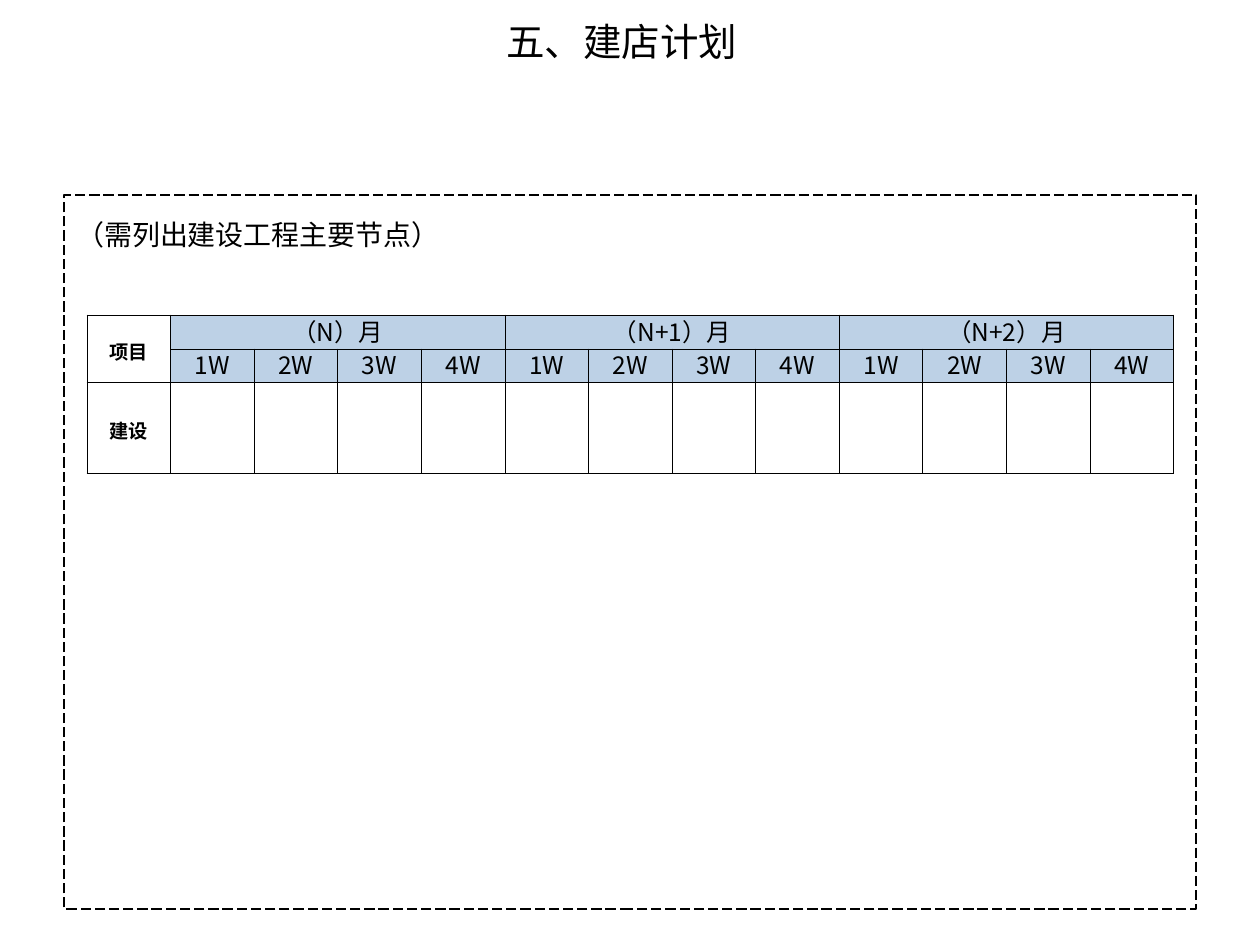
from lxml.etree import SubElement
from pptx import Presentation
from pptx.dml.color import RGBColor
from pptx.enum.dml import MSO_LINE
from pptx.enum.shapes import MSO_SHAPE
from pptx.enum.text import MSO_ANCHOR, MSO_AUTO_SIZE, PP_ALIGN
from pptx.oxml.ns import qn
from pptx.util import Emu, Pt

TITLE = "五、建店计划"
NOTE = "（需列出建设工程主要节点）"
CORNER, TASK = "项目", "建设"
MONTHS = ["（N）月", "（N+1）月", "（N+2）月"]
WEEKS = ["1W", "2W", "3W", "4W"]

FONT = "Noto Sans CJK SC"
COLORS = {"ink": "000000", "header": "BDD1E6"}
SLIDE = (1260, 945)
TITLE_BOX = (494, 4, 384, 64)
FRAME_BOX = (64, 195, 1132, 714)
TABLE_LEFT, TABLE_TOP, TABLE_WIDTH = 87, 315, 1087
ROW_HEIGHTS = [34, 33, 91]


def px(value):
    return Emu(round(value * 914400 / 126))


def color(name):
    return RGBColor.from_string(COLORS[name])


def write(frame, text, size, align, bold=False, spacing=None):
    frame.text = text
    para = frame.paragraphs[0]
    para.alignment = align
    para.line_spacing = spacing
    for span in para.runs:
        font = span.font
        font.size, font.bold, font.name = Pt(size), bold, FONT
        font.color.rgb = color("ink")
        SubElement(font._element, qn("a:ea"), typeface=FONT)


def add_borders(cell):
    properties = cell._tc.get_or_add_tcPr()
    for index, side in enumerate(("lnL", "lnR", "lnT", "lnB")):
        line = properties.makeelement(qn(f"a:{side}"), {"w": str(Pt(0.5))})
        fill = SubElement(line, qn("a:solidFill"))
        SubElement(fill, qn("a:srgbClr"), val=COLORS["ink"])
        properties.insert(index, line)


def fill_cell(cell, text, size=14, bold=False, header=True):
    if header:
        cell.fill.solid()
        cell.fill.fore_color.rgb = color("header")
    write(cell.text_frame, text, size, PP_ALIGN.CENTER, bold, Pt(18))


def add_schedule(page):
    columns = 1 + len(MONTHS) * len(WEEKS)
    table = page.shapes.add_table(
        len(ROW_HEIGHTS), columns,
        *map(px, (TABLE_LEFT, TABLE_TOP, TABLE_WIDTH, sum(ROW_HEIGHTS)))).table
    table.first_row = table.horz_banding = False
    for column in table.columns:
        column.width = px(TABLE_WIDTH / columns)
    for row, height in zip(table.rows, ROW_HEIGHTS):
        row.height = px(height)
    for cell in table.iter_cells():
        cell.fill.background()
        cell.vertical_anchor = MSO_ANCHOR.MIDDLE
        cell.margin_left = cell.margin_right = cell.margin_top = px(1)
        cell.margin_bottom = 0
        cell.text_frame.paragraphs[0].font.size = Pt(11)
        add_borders(cell)

    table.cell(0, 0).merge(table.cell(1, 0))
    fill_cell(table.cell(0, 0), CORNER, 11, True, header=False)
    fill_cell(table.cell(2, 0), TASK, 11, True, header=False)
    for index, month in enumerate(MONTHS):
        first = 1 + index * len(WEEKS)
        table.cell(0, first).merge(table.cell(0, first + len(WEEKS) - 1))
        fill_cell(table.cell(0, first), month)
        for offset, week in enumerate(WEEKS):
            fill_cell(table.cell(1, first + offset), week)


def main():
    deck = Presentation()
    deck.slide_width, deck.slide_height = map(px, SLIDE)
    page = deck.slides.add_slide(deck.slide_layouts[6])

    frame = page.shapes.add_shape(MSO_SHAPE.RECTANGLE, *map(px, FRAME_BOX))
    frame.shadow.inherit = False
    frame.fill.background()
    frame.line.color.rgb = color("ink")
    frame.line.width = Pt(0.75)
    frame.line.dash_style = MSO_LINE.LONG_DASH
    frame.text_frame.vertical_anchor = MSO_ANCHOR.TOP
    write(frame.text_frame, NOTE, 16, PP_ALIGN.LEFT, spacing=1.5)

    add_schedule(page)

    title = page.shapes.add_textbox(*map(px, TITLE_BOX)).text_frame
    title.word_wrap = True
    title.auto_size = MSO_AUTO_SIZE.SHAPE_TO_FIT_TEXT
    title.vertical_anchor = MSO_ANCHOR.MIDDLE
    write(title, TITLE, 22, PP_ALIGN.JUSTIFY, spacing=1.2)

    deck.save("out.pptx")


if __name__ == "__main__":
    main()
